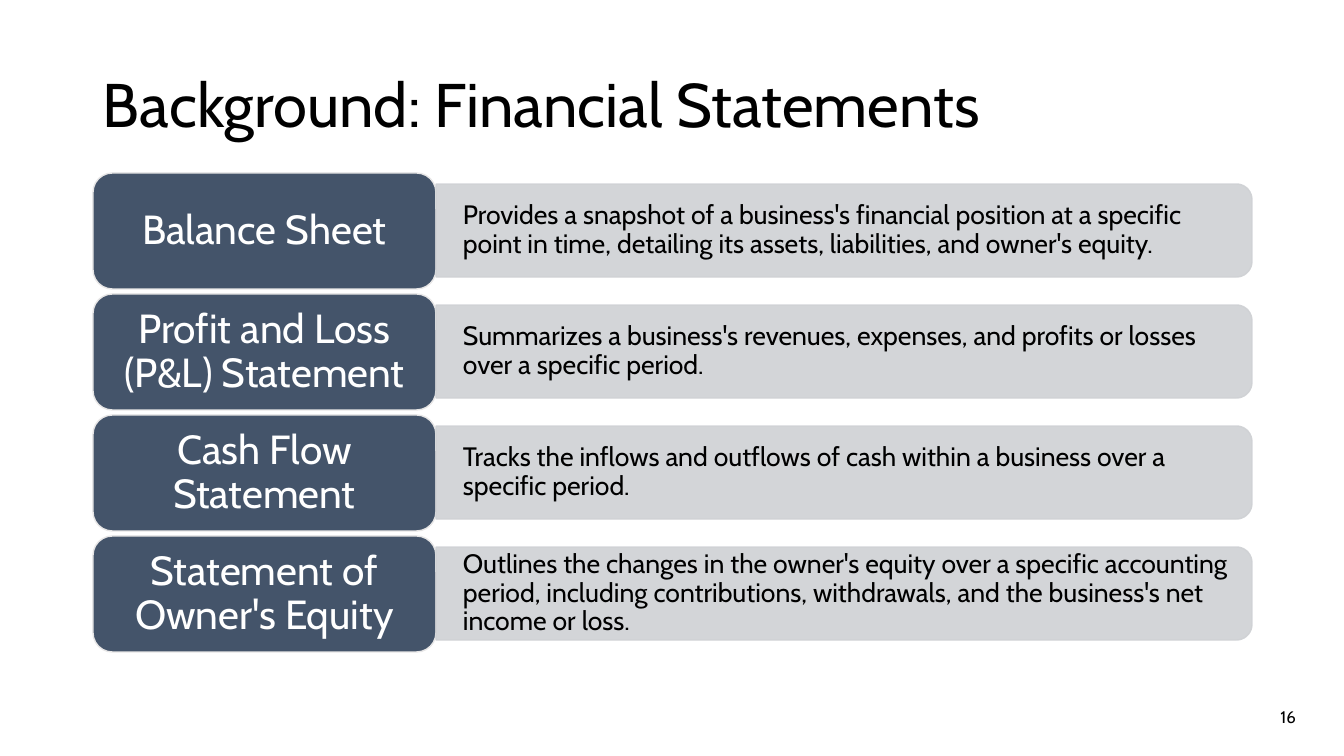
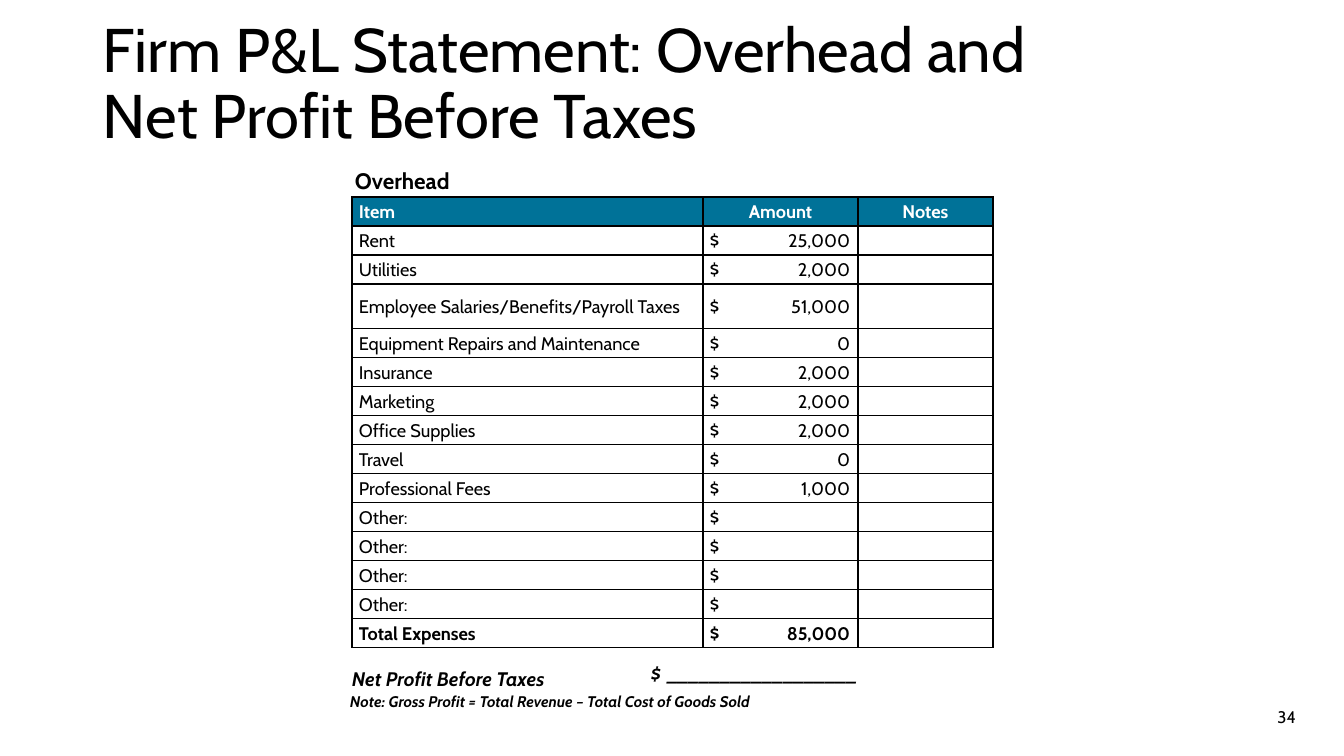
import math
from dataclasses import dataclass, field
from typing import Any

from lxml import etree
from pptx import Presentation
from pptx import util as u
from pptx.dml.color import RGBColor
from pptx.enum import shapes, text
from pptx.oxml.ns import qn

SCALE = 12192000 / 1344  # EMU in one px
COLOURS = {
    "ink": "000000",
    "paper": "FFFFFF",
    "label": "44546A",
    "label_edge": "E7E6E6",
    "bar": "CFD1D4",
    "header": "007298",
}
FONT = "Cabin"
LEFT, CENTRE, RIGHT = text.PP_ALIGN.LEFT, text.PP_ALIGN.CENTER, text.PP_ALIGN.RIGHT
TOP, MIDDLE, BOTTOM = text.MSO_ANCHOR.TOP, text.MSO_ANCHOR.MIDDLE, text.MSO_ANCHOR.BOTTOM


@dataclass(frozen=True)
class Area:
    left: int
    top: int
    width: int
    height: int

    def emu(self) -> list[int]:
        return [px(n) for n in (self.left, self.top, self.width, self.height)]


@dataclass(frozen=True)
class Style:
    size: int
    colour: str = "ink"
    font: dict[str, Any] = field(default_factory=dict)
    para: dict[str, Any] = field(default_factory=dict)
    tabs: tuple[tuple[int, str], ...] = ()


@dataclass(frozen=True)
class Span:
    text: str
    underline: bool = False


@dataclass(frozen=True)
class Statement:
    name: str
    meaning: str


@dataclass(frozen=True)
class Expense:
    item: str
    amount: str = ""
    height: int = 29


# Text styles
TITLE = Style(44, para={"line_spacing": 0.9})
PAGE_NUMBER = Style(12, para={"alignment": RIGHT})
LABEL = Style(29, "paper", para={"alignment": CENTRE, "line_spacing": 0.9})
MEANING = Style(19, para={"alignment": LEFT, "line_spacing": 0.9})
HEADING = Style(16, font={"bold": True})
BOLD_ITALIC = {"bold": True, "italic": True}
NET_TABS = ((17, "l"), (217, "l"), (226, "l"), (288, "l"))
NET_PROFIT = Style(14, font=BOLD_ITALIC)
NET_BLANK = Style(14, font=BOLD_ITALIC, tabs=NET_TABS)
NOTE = Style(11, font=BOLD_ITALIC)
CELL_PARA = {"line_spacing": 1.07, "space_after": u.Pt(4)}
CELL_TABS = (((331, "l"),), ((140, "r"),), ())

# Content
STATEMENTS = [
    Statement("Balance Sheet",
              "Provides a snapshot of a business's financial position at a specific "
              "point in time, detailing its assets, liabilities, and owner's equity."),
    Statement("Profit and Loss (P&L) Statement",
              "Summarizes a business's revenues, expenses, and profits or losses "
              "over a specific period."),
    Statement("Cash Flow Statement",
              "Tracks the inflows and outflows of cash within a business over a "
              "specific period."),
    Statement("Statement of Owner's Equity",
              "Outlines the changes in the owner's equity over a specific accounting "
              "period, including contributions, withdrawals, and the business's net "
              "income or loss."),
]
EXPENSES = [
    Expense("Rent", "25,000"),
    Expense("Utilities", "2,000"),
    Expense("Employee Salaries/Benefits/Payroll Taxes", "51,000", 45),
    Expense("Equipment Repairs and Maintenance", "0"),
    Expense("Insurance", "2,000"),
    Expense("Marketing", "2,000"),
    Expense("Office Supplies", "2,000"),
    Expense("Travel", "0"),
    Expense("Professional Fees", "1,000"),
    *[Expense("Other: ")] * 4,
    Expense("Total Expenses", "85,000"),
]
HEADERS = ("Item", "Amount", "Notes")
COLUMN_WIDTHS = (351, 155, 135)


def px(length: float) -> int:
    return round(length * SCALE)


def rgb(colour: str) -> RGBColor:
    return RGBColor.from_string(COLOURS[colour])


def set_all(target: Any, values: dict[str, Any]) -> None:
    for name, value in values.items():
        setattr(target, name, value)


def paint(target: Any, colour: str) -> None:
    target.solid()
    target.fore_color.rgb = rgb(colour)


def write(frame: Any, spans: list[Span], style: Style) -> None:
    """Fill the first paragraph of a frame; a newline is a line break."""
    para = frame.paragraphs[0]
    set_all(para, style.para)
    if style.tabs:
        stops = etree.SubElement(para._p.get_or_add_pPr(), qn("a:tabLst"))
        for position, align in style.tabs:
            etree.SubElement(stops, qn("a:tab"), pos=str(px(position)), algn=align)
    for span in spans:
        if span.text == "\n":
            para.add_line_break()
            continue
        run = para.add_run()
        run.text = span.text
        set_all(run.font, {"name": FONT, "size": u.Pt(style.size), **style.font})
        run.font.color.rgb = rgb(style.colour)
        if span.underline:
            run.font.underline = True
    if not spans:
        etree.SubElement(para._p, qn("a:endParaRPr"), sz=str(style.size * 100))


def set_frame(frame: Any, anchor: Any, margins: tuple[int, int, int, int]) -> None:
    sides = ("margin_left", "margin_top", "margin_right", "margin_bottom")
    set_all(frame, {"word_wrap": True, "vertical_anchor": anchor,
                    **{side: px(n) for side, n in zip(sides, margins)}})


def add_text(page: Any, area: Area, spans: list[Span], style: Style,
             anchor: Any = TOP) -> None:
    frame = page.shapes.add_textbox(*area.emu()).text_frame
    set_frame(frame, anchor, (10, 5, 10, 5))
    write(frame, spans, style)


def add_page(deck: Any, title: list[str], title_height: int, number: int) -> Any:
    page = deck.slides.add_slide(deck.slide_layouts[6])
    spans = [Span(line) for line in title]
    add_text(page, Area(93, 0, 1159, title_height), spans, TITLE, BOTTOM)
    add_text(page, Area(1004, 697, 302, 40), [Span(str(number))], PAGE_NUMBER, MIDDLE)
    return page


# Statement rows
def finish(shape: Any, fill: str, edge: str) -> None:
    shape.shadow.inherit = False
    paint(shape.fill, fill)
    paint(shape.line.fill, edge)
    shape.line.width = u.Pt(1)


def add_label(page: Any, area: Area, name: str) -> None:
    label = page.shapes.add_shape(shapes.MSO_SHAPE.ROUNDED_RECTANGLE, *area.emu())
    finish(label, "label", "label_edge")
    set_frame(label.text_frame, MIDDLE, (12, 6, 12, 6))
    write(label.text_frame, [Span(name)], LABEL)


def add_bar(page: Any, area: Area, meaning: str) -> None:
    """Bar with a square left end and a rounded right end."""
    radius = area.height / 6
    right, bottom = area.left + area.width, area.top + area.height
    points = [(area.left, area.top)]
    for start, middle in ((-90, area.top + radius), (0, bottom - radius)):
        for degrees in range(start, start + 91, 10):
            angle = math.radians(degrees)
            points.append((right - radius + radius * math.cos(angle),
                           middle + radius * math.sin(angle)))
    points.append((area.left, bottom))
    corners = [(px(x), px(y)) for x, y in points]
    builder = page.shapes.build_freeform(*corners[0])
    builder.add_line_segments(corners[1:], close=True)
    bar = builder.convert_to_shape()
    finish(bar, "bar", "bar")
    for colour in bar._element.spPr.iter(qn("a:srgbClr")):
        etree.SubElement(colour, qn("a:alpha"), val="90000")
    set_frame(bar.text_frame, MIDDLE, (27, 8, 11, 8))
    write(bar.text_frame, [Span(meaning)], MEANING)


# Overhead table
def set_cell(cell: Any, spans: list[Span], style: Style, fill: str) -> None:
    properties = cell._tc.get_or_add_tcPr()
    for side in ("lnL", "lnR", "lnT", "lnB"):
        line = etree.SubElement(properties, qn(f"a:{side}"), w=str(u.Pt(1)))
        solid = etree.SubElement(line, qn("a:solidFill"))
        etree.SubElement(solid, qn("a:srgbClr"), val=COLOURS["ink"])
    paint(cell.fill, fill)
    set_all(cell, {"vertical_anchor": MIDDLE, "margin_left": px(7),
                   "margin_right": px(7), "margin_top": 0, "margin_bottom": 0})
    write(cell.text_frame, spans, style)


def expense_spans(expense: Expense) -> list[list[Span]]:
    item = [Span(expense.item)]
    if expense.item.startswith("Other"):
        item.append(Span("\t", underline=True))
    amount = f"$\t{expense.amount}" if expense.amount else "$"
    return [item, [Span(amount)], []]


def add_overhead_table(page: Any, left: int, top: int) -> None:
    heights = [29] + [expense.height for expense in EXPENSES]
    area = Area(left, top, sum(COLUMN_WIDTHS), sum(heights))
    table = page.shapes.add_table(len(heights), len(COLUMN_WIDTHS), *area.emu()).table
    set_all(table, {"first_row": False, "horz_banding": False})
    for column, width in zip(table.columns, COLUMN_WIDTHS):
        column.width = px(width)
    for row, height in zip(table.rows, heights):
        row.height = px(height)
    for column, header in enumerate(HEADERS):
        para = {**CELL_PARA, "alignment": CENTRE if column else LEFT}
        style = Style(13, "paper", {"bold": True}, para)
        set_cell(table.cell(0, column), [Span(header)], style, "header")
    for row, expense in enumerate(EXPENSES, 1):
        weight = {"bold": row == len(EXPENSES)}
        for column, spans in enumerate(expense_spans(expense)):
            style = Style(13, "ink", weight, CELL_PARA, CELL_TABS[column])
            set_cell(table.cell(row, column), spans, style, "paper")


def build_statements(deck: Any) -> None:
    page = add_page(deck, ["Background: Financial Statements"], 146, 16)
    for index, statement in enumerate(STATEMENTS):
        top = 173 + 121 * index
        add_label(page, Area(93, top, 343, 116), statement.name)
        add_bar(page, Area(436, top + 11, 816, 93), statement.meaning)


def build_overhead(deck: Any) -> None:
    title = ["Firm P&L Statement: Overhead and", "\n", "Net Profit Before Taxes"]
    page = add_page(deck, title, 157, 34)
    add_text(page, Area(345, 162, 299, 37), [Span("Overhead")], HEADING)
    add_overhead_table(page, 352, 197)
    add_text(page, Area(342, 662, 299, 34), [Span("Net Profit Before Taxes")], NET_PROFIT)
    blank = [Span("$\t__________________"), Span("\t", True), Span("\t"), Span("\t", True)]
    add_text(page, Area(641, 657, 330, 34), blank, NET_BLANK)
    note = "Note: Gross Profit = Total Revenue – Total Cost of Goods Sold"
    add_text(page, Area(340, 687, 617, 29), [Span(note)], NOTE)


def main() -> None:
    deck = Presentation()
    set_all(deck, {"slide_width": px(1344), "slide_height": px(756)})
    build_statements(deck)
    build_overhead(deck)
    deck.save("out.pptx")


if __name__ == "__main__":
    main()
